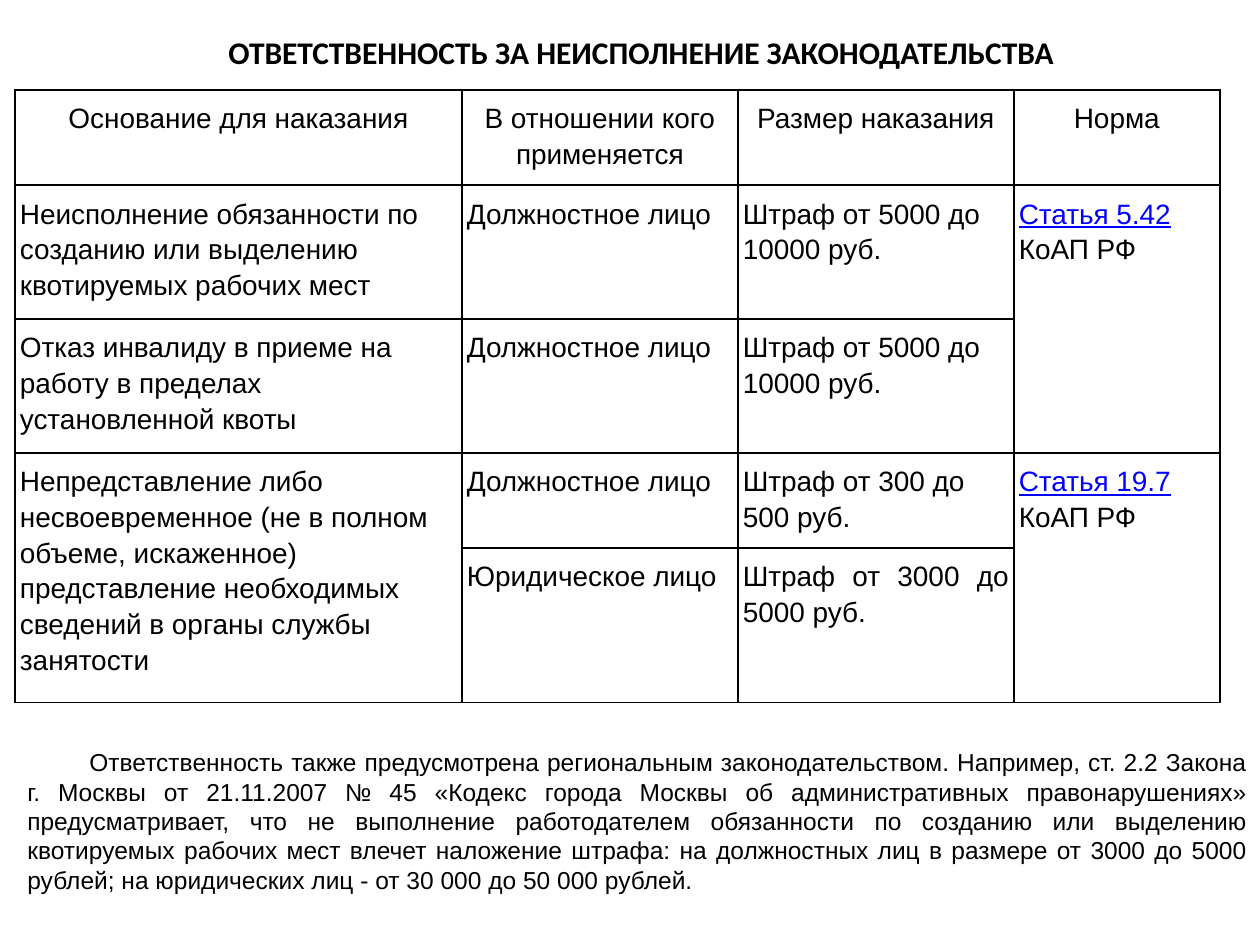
from dataclasses import dataclass

from lxml import etree
from pptx import Presentation
from pptx.dml.color import RGBColor
from pptx.enum.text import MSO_ANCHOR, PP_ALIGN
from pptx.oxml.ns import qn
from pptx.util import Pt

LEFT, MID, JUST = PP_ALIGN.LEFT, PP_ALIGN.CENTER, PP_ALIGN.JUSTIFY
TOP, CENTER = MSO_ANCHOR.TOP, MSO_ANCHOR.MIDDLE
SCALE = 914400 / 126


@dataclass(frozen=True)
class Theme:
    ink: str = "000000"
    link: str = "0000FF"
    head: str = "Calibri"
    body: str = "Arial"
    title: int = 18
    cell: int = 16
    note: int = 14
    line: int = 1


THEME = Theme()
INDENT = 62
COLS = [447, 276, 276, 206]
ROWS = [82, 116, 116, 82, 82, 55]
OFFICER = "Должностное лицо"
FINE = "Штраф от 5000 до 10000 руб."
CODE = " КоАП РФ"
GRID = [
    ["Основание для наказания", "В отношении кого применяется",
     "Размер наказания", "Норма"],
    ["Неисполнение обязанности по созданию или выделению квотируемых "
     "рабочих мест", OFFICER, FINE, ("Статья 5.42", CODE)],
    ["Отказ инвалиду в приеме на работу в пределах установленной квоты",
     OFFICER, FINE, None],
    ["Непредставление либо несвоевременное (не в полном объеме, искаженное) "
     "представление необходимых сведений в органы службы занятости",
     OFFICER, "Штраф от 300 до 500 руб.", ("Статья 19.7", CODE)],
    [None, "Юридическое лицо", "Штраф от 3000 до 5000 руб.", None],
    [None] * 4,
]
ALIGNS = [MID, LEFT, LEFT, LEFT, JUST, JUST]
SPANS = [(1, 3, 2, 3), (3, 0, 5, 0), (3, 3, 5, 3)]
OPEN = {(4, 1): "B", (4, 2): "B", (5, 1): "T", (5, 2): "T"}
TITLE = "ОТВЕТСТВЕННОСТЬ ЗА НЕИСПОЛНЕНИЕ ЗАКОНОДАТЕЛЬСТВА"
NOTE = (
    "Ответственность также предусмотрена региональным законодательством. "
    "Например, ст. 2.2 Закона г. Москвы от 21.11.2007 № 45 «Кодекс города "
    "Москвы об административных правонарушениях» предусматривает, что не "
    "выполнение работодателем обязанности по созданию или выделению "
    "квотируемых рабочих мест влечет наложение штрафа: на должностных лиц в "
    "размере от 3000 до 5000 рублей; на юридических лиц - от 30 000 до "
    "50 000 рублей."
)


def px(n):
    return round(n * SCALE)


def style(run, face, size, color=THEME.ink, bold=False):
    font = run.font
    font.name, font.size, font.bold = face, Pt(size), bold
    font.color.rgb = RGBColor.from_string(color)


def add_text(slide, area, text, face, size, align, anchor=TOP, bold=False):
    """Add a text box whose first line is indented."""
    frame = slide.shapes.add_textbox(*map(px, area)).text_frame
    frame.word_wrap = True
    frame.vertical_anchor = anchor
    frame.text = text
    para = frame.paragraphs[0]
    para.alignment = align
    props = para._p.get_or_add_pPr()
    props.set("marL", "0")
    props.set("indent", str(px(INDENT)))
    style(para.runs[0], face, size, bold=bold)


def set_edges(cell, skip):
    """Draw the cell's borders, leaving out the side named by skip."""
    props = cell._tc.get_or_add_tcPr()
    for i, side in enumerate("LRTB"):
        line = etree.Element(qn(f"a:ln{side}"), w=str(Pt(THEME.line)))
        if side == skip:
            etree.SubElement(line, qn("a:noFill"))
        else:
            fill = etree.SubElement(line, qn("a:solidFill"))
            etree.SubElement(fill, qn("a:srgbClr"), val=THEME.ink)
        props.insert(i, line)


def fill_cell(cell, text, align):
    """Write plain text, or a (link, rest) pair, into the cell."""
    para = cell.text_frame.paragraphs[0]
    para.alignment = align
    para.line_spacing = 1.15
    parts = text if isinstance(text, tuple) else (text,)
    for part in parts:
        run = para.add_run()
        run.text = part
        style(run, THEME.body, THEME.cell)
    if len(parts) > 1:
        style(para.runs[0], THEME.body, THEME.cell, THEME.link)
        para.runs[0].font.underline = True


def add_grid(slide, area):
    frame = slide.shapes.add_table(len(ROWS), len(COLS), *map(px, area))
    table = frame.table
    table.first_row = table.horz_banding = False
    for col, width in zip(table.columns, COLS):
        col.width = px(width)
    for row, height in zip(table.rows, ROWS):
        row.height = px(height)
    frame.height = px(area[3])
    for r, line in enumerate(GRID):
        for c, text in enumerate(line):
            cell = table.cell(r, c)
            cell.margin_left = cell.margin_right = px(5)
            cell.margin_top = cell.margin_bottom = px(9)
            cell.fill.background()
            set_edges(cell, OPEN.get((r, c)))
            if text:
                fill_cell(cell, text, ALIGNS[r])
    for top, left, low, right in SPANS:
        table.cell(top, left).merge(table.cell(low, right))


def main():
    deck = Presentation()
    deck.slide_width, deck.slide_height = px(1260), px(945)
    slide = deck.slides.add_slide(deck.slide_layouts[6])
    add_text(slide, (0, 27, 1221, 50), TITLE, THEME.head, THEME.title,
             MID, CENTER, True)
    add_grid(slide, (15, 90, sum(COLS), 612))
    add_text(slide, (15, 741, 1245, 190), NOTE, THEME.body, THEME.note, JUST)
    deck.save("out.pptx")


if __name__ == "__main__":
    main()
